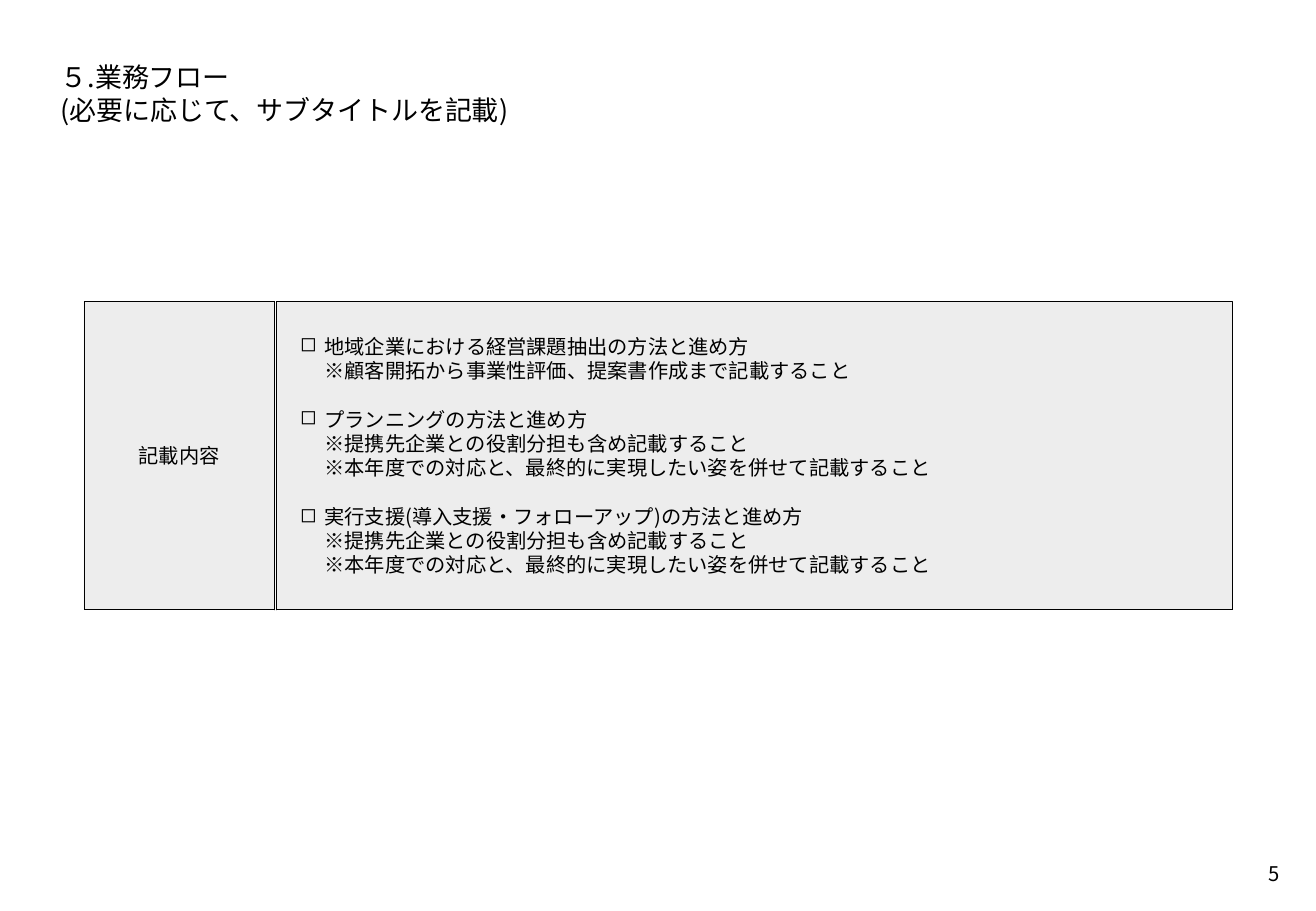
import dataclasses
import typing

import lxml.etree
import pptx
import pptx.dml.color
import pptx.enum.dml
import pptx.enum.shapes
import pptx.enum.text
import pptx.oxml.ns
import pptx.util

PX = 9144  # EMU, 100 px to the inch
Align = pptx.enum.text.PP_ALIGN
Anchor = pptx.enum.text.MSO_ANCHOR


@dataclasses.dataclass(frozen=True)
class Theme:
    font: str = "Noto Sans CJK JP"
    ink: str = "000000"
    panel: str = "EDEDED"
    head: int = 16
    body: int = 12
    lead: float = 1.2
    edge: float = 0.25
    bullet: str = "◻"
    indent: int = 20


@dataclasses.dataclass(frozen=True)
class Block:
    """Text in a box; the lines of one item share a paragraph."""

    left: int
    top: int
    width: int
    height: int
    items: tuple[tuple[str, ...], ...]
    size: int
    inset: int = 20
    align: Align = Align.LEFT
    anchor: Anchor = Anchor.TOP
    wrap: bool = True
    marked: bool = False

    def frame(self) -> list[int]:
        return [n * PX for n in (self.left, self.top, self.width, self.height)]


THEME = Theme()

TITLE = Block(30, 30, 1024, 79, (("５.業務フロー", "(必要に応じて、サブタイトルを記載)"),), THEME.head)
PAGE = Block(1024, 699, 39, 39, (("5",),), THEME.body, inset=10, align=Align.RIGHT, wrap=False)

ROLES = "※提携先企業との役割分担も含め記載すること"
GOALS = "※本年度での対応と、最終的に実現したい姿を併せて記載すること"
POINTS = (
    ("地域企業における経営課題抽出の方法と進め方", "※顧客開拓から事業性評価、提案書作成まで記載すること"),
    ("プランニングの方法と進め方", ROLES, GOALS),
    ("実行支援(導入支援・フォローアップ)の方法と進め方", ROLES, GOALS),
)
PANELS = (
    Block(227, 248, 787, 254, POINTS, THEME.body, anchor=Anchor.MIDDLE, marked=True),
    Block(69, 248, 157, 254, (("記載内容",),), THEME.body, inset=10,
          align=Align.CENTER, anchor=Anchor.MIDDLE),
)


def color(code: str) -> pptx.dml.color.RGBColor:
    return pptx.dml.color.RGBColor.from_string(code)


def style(para: typing.Any, block: Block) -> None:
    para.alignment = block.align
    para.line_spacing = pptx.util.Pt(block.size * THEME.lead)
    font = para.font
    font.name = THEME.font
    font.size = pptx.util.Pt(block.size)
    font.color.rgb = color(THEME.ink)
    qn = pptx.oxml.ns.qn
    props = para._p.get_or_add_pPr()
    base = props.find(qn("a:defRPr"))
    latin = base.find(qn("a:latin"))
    asian = lxml.etree.Element(qn("a:ea"), typeface=THEME.font)
    latin.addnext(asian)
    if block.marked:
        props.set("marL", str(THEME.indent * PX))
        props.set("indent", str(-THEME.indent * PX))
        mark = lxml.etree.Element(qn("a:buChar"), char=THEME.bullet)
        base.addprevious(mark)


def write(shape: typing.Any, block: Block) -> None:
    frame = shape.text_frame
    frame.word_wrap = block.wrap
    frame.vertical_anchor = block.anchor
    inset = block.inset * PX
    frame.margin_left = frame.margin_right = inset
    frame.margin_top = frame.margin_bottom = inset
    for i, lines in enumerate(block.items):
        para = frame.add_paragraph() if i else frame.paragraphs[0]
        para.text = "\v".join(lines)
        style(para, block)
        if i:
            para.space_before = pptx.util.Pt(block.size * THEME.lead)


def panel(shapes: typing.Any, block: Block) -> None:
    shape = shapes.add_shape(pptx.enum.shapes.MSO_SHAPE.RECTANGLE, *block.frame())
    shape.shadow.inherit = False
    shape.fill.solid()
    shape.fill.fore_color.rgb = color(THEME.panel)
    shape.line.color.rgb = color(THEME.ink)
    shape.line.width = pptx.util.Pt(THEME.edge)
    shape.line.dash_style = pptx.enum.dml.MSO_LINE.ROUND_DOT
    write(shape, block)


def main() -> None:
    deck = pptx.Presentation()
    deck.slide_width, deck.slide_height = 1083 * PX, 750 * PX
    slide = deck.slides.add_slide(deck.slide_layouts[6])
    for block in (TITLE, PAGE):
        write(slide.shapes.add_textbox(*block.frame()), block)
    group = slide.shapes.add_group_shape()
    for block in PANELS:
        panel(group.shapes, block)
    deck.save("out.pptx")


if __name__ == "__main__":
    main()
